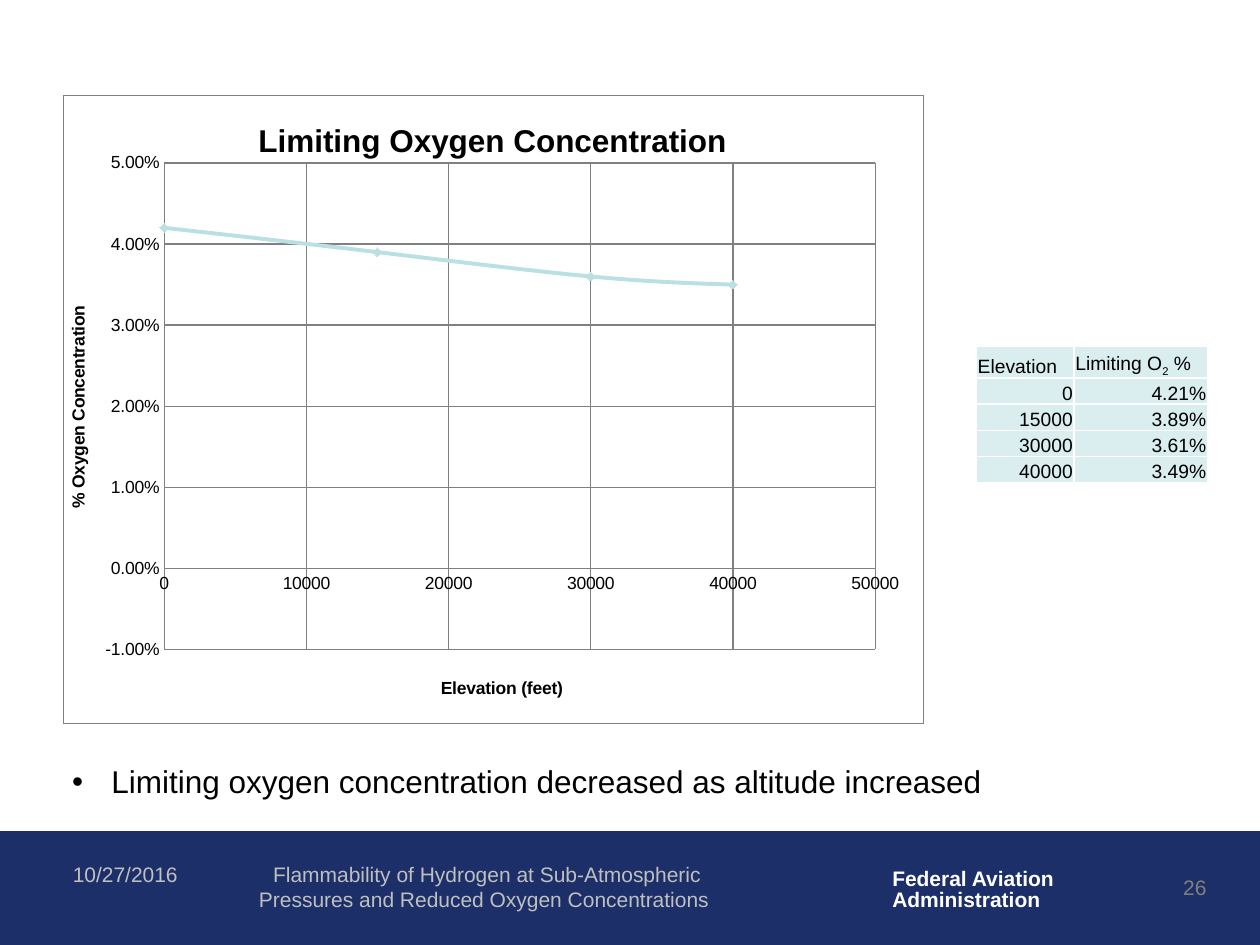
from lxml import etree
from pptx import Presentation
from pptx import util as u
from pptx.chart.data import XyChartData
from pptx.dml.color import RGBColor
from pptx.enum import chart as charts, shapes, text
from pptx.oxml import parse_xml
from pptx.oxml.ns import nsdecls, qn

COLORS = {
    "navy": "1D2F68", "white": "FFFFFF", "black": "000000", "grey": "808080",
    "footer": "BFBFBF", "date": "C0C0C0", "series": "BBE0E3", "cell": "DAEDEF",
}
FONT = "Arial"
READINGS = [(0, 0.0421), (15000, 0.0389), (30000, 0.0361), (40000, 0.0349)]
ALIGN = text.PP_ALIGN


def rgb(name):
    return RGBColor.from_string(COLORS[name])


def set_font(font, size, color="black", bold=False):
    font.name, font.size, font.bold = FONT, u.Pt(size), bold
    font.color.rgb = rgb(color)


def place_chart_part(parent, x, y, width=None, height=None):
    """Give a chart title or plot area a manual layout, in fractions of the chart."""
    for old in parent.findall(qn("c:layout")):
        parent.remove(old)
    inner = '<c:layoutTarget val="inner"/>' if width else ""
    sizes = f'<c:w val="{width}"/><c:h val="{height}"/>' if width else ""
    layout = parse_xml(
        f'<c:layout {nsdecls("c")}><c:manualLayout>{inner}<c:xMode val="edge"/>'
        f'<c:yMode val="edge"/><c:x val="{x}"/><c:y val="{y}"/>{sizes}'
        "</c:manualLayout></c:layout>")
    rich_text = parent.find(qn("c:tx"))
    if rich_text is None:
        parent.insert(0, layout)
    else:
        rich_text.addnext(layout)


class SlideBuilder:
    """Builds the slide's elements in one shared style; lengths are in points."""

    def __init__(self, presentation):
        self.slide = presentation.slides.add_slide(presentation.slide_layouts[1])
        title = self.slide.shapes.title
        title.element.getparent().remove(title.element)

    def band(self, left, top, width, height):
        shape = self.slide.shapes.add_shape(
            shapes.MSO_SHAPE.RECTANGLE, *map(u.Pt, (left, top, width, height)))
        shape.shadow.inherit = False
        shape.fill.solid()
        shape.fill.fore_color.rgb = shape.line.color.rgb = rgb("navy")
        shape.line.width = u.Pt(0.75)

    def label(self, box, content, color, align=ALIGN.LEFT, bold=False, spacing=None, wrap=True):
        frame = self.slide.shapes.add_textbox(*map(u.Pt, box)).text_frame
        frame.word_wrap = wrap
        frame.text = content
        for paragraph in frame.paragraphs:
            paragraph.alignment = align
            paragraph.line_spacing = spacing
            set_font(paragraph.font, 12, color, bold)

    def bullet(self, box, content):
        body = self.slide.placeholders[1]
        body.left, body.top, body.width, body.height = map(u.Pt, box)
        frame = body.text_frame
        frame.auto_size = text.MSO_AUTO_SIZE.NONE
        frame.text = content
        paragraph = frame.paragraphs[0]
        properties = paragraph._p.get_or_add_pPr()
        properties.set("marL", str(u.Pt(22.5)))
        properties.set("indent", str(-u.Pt(22.5)))
        etree.SubElement(properties, qn("a:buChar")).set("char", "•")
        paragraph.space_before = u.Pt(0)
        set_font(paragraph.font, 18)

    def axis(self, axis, title, position, low, high, step, number_format):
        axis.minimum_scale, axis.maximum_scale, axis.major_unit = low, high, step
        axis.major_tick_mark = axis.minor_tick_mark = charts.XL_TICK_MARK.NONE
        axis.has_major_gridlines = True
        for line in (axis.format.line, axis.major_gridlines.format.line):
            line.color.rgb, line.width = rgb("grey"), u.Pt(0.75)
        axis.tick_labels.number_format = number_format
        axis.tick_labels.number_format_is_linked = False
        set_font(axis.tick_labels.font, 10)
        self.chart_title(axis.axis_title, title, 10, position)

    def chart_title(self, title, content, size, position):
        title.text_frame.text = content
        set_font(title.text_frame.paragraphs[0].runs[0].font, size, bold=True)
        place_chart_part(title._element, *position)

    def chart(self, box):
        data = XyChartData()
        points = data.add_series("Limiting O2 %", number_format="0.00%")
        for elevation, oxygen in READINGS:
            points.add_data_point(elevation, round(oxygen, 3))
        chart = self.slide.shapes.add_chart(
            charts.XL_CHART_TYPE.XY_SCATTER_SMOOTH, *map(u.Pt, box), data).chart
        set_font(chart.font, 10)
        chart.has_legend = False
        chart.has_title = True
        self.chart_title(chart.chart_title, "Limiting Oxygen Concentration", 18, (0.22, 0.03))
        self.axis(chart.category_axis, "Elevation (feet)", (0.435, 0.92), 0, 50000, 10000, "0")
        self.axis(chart.value_axis, "% Oxygen Concentration", (0, 0.33),
                  -0.01, 0.05, 0.01, "0.00%")
        chart_element = chart._chartSpace.find(qn("c:chart"))
        place_chart_part(chart_element.find(qn("c:plotArea")), 0.117, 0.108, 0.827, 0.774)
        chart_element.addnext(parse_xml(
            f'<c:spPr {nsdecls("c", "a")}><a:noFill/><a:ln w="{u.Pt(0.75)}"><a:solidFill>'
            f'<a:srgbClr val="{COLORS["grey"]}"/></a:solidFill></a:ln></c:spPr>'))
        chart.plots[0].vary_by_categories = False
        series = chart.plots[0].series[0]
        series._element.find(qn("c:smooth")).set("val", "1")
        series.format.line.color.rgb, series.format.line.width = rgb("series"), u.Pt(2.25)
        series.marker.style, series.marker.size = charts.XL_MARKER_STYLE.DIAMOND, 5
        series.marker.format.fill.solid()
        series.marker.format.fill.fore_color.rgb = rgb("series")
        series.marker.format.line.color.rgb = rgb("series")

    def cell(self, cell, parts, align):
        """Fill a cell; every second part of its text is subscript."""
        properties = cell._tc.get_or_add_tcPr()
        for side in ("lnL", "lnR", "lnT", "lnB"):
            properties.append(parse_xml(
                f'<a:{side} {nsdecls("a")} w="{u.Pt(1)}"><a:solidFill>'
                f'<a:srgbClr val="{COLORS["white"]}"/></a:solidFill></a:{side}>'))
        cell.fill.solid()
        cell.fill.fore_color.rgb = rgb("cell")
        cell.margin_left = cell.margin_right = cell.margin_top = u.Pt(0.72)
        cell.margin_bottom = 0
        cell.vertical_anchor = text.MSO_ANCHOR.BOTTOM
        paragraph = cell.text_frame.paragraphs[0]
        paragraph.alignment = align
        for index, part in enumerate(parts):
            run = paragraph.add_run()
            run.text = part
            set_font(run.font, 11)
            if index % 2:
                run.font._element.set("baseline", "-25000")

    def table(self, left, top, widths, heights):
        rows = [(["Elevation"], ["Limiting O", "2", " %"])]
        rows += [([str(elevation)], [f"{oxygen:.2%}"]) for elevation, oxygen in READINGS]
        table = self.slide.shapes.add_table(
            len(rows), len(widths), *map(u.Pt, (left, top, sum(widths), sum(heights)))).table
        for column, width in zip(table.columns, widths):
            column.width = u.Pt(width)
        for row_index, (row, height) in enumerate(zip(rows, heights)):
            table.rows[row_index].height = u.Pt(height)
            for column_index, parts in enumerate(row):
                self.cell(table.cell(row_index, column_index), parts,
                          ALIGN.RIGHT if row_index else ALIGN.LEFT)


def main():
    presentation = Presentation()
    presentation.slide_width, presentation.slide_height = u.Pt(720), u.Pt(540)
    builder = SlideBuilder(presentation)
    builder.band(0, 475.2, 720, 64.4)
    builder.label((546.5, 496.5, 150, 36), "26", "grey", ALIGN.RIGHT)
    builder.label((131.5, 488.6, 293.8, 36),
                  "Flammability of Hydrogen at Sub-Atmospheric Pressures "
                  "and Reduced Oxygen Concentrations ", "footer", ALIGN.CENTER)
    builder.label((34.5, 489, 85, 21.6), "10/27/2016", "date")
    builder.label((502.8, 493.2, 108, 31.7), "Federal Aviation\nAdministration", "white",
                  bold=True, spacing=0.85, wrap=False)
    builder.chart((36, 54, 492, 360))
    builder.table(558, 198, (55.8, 76.2), (18, 15, 15, 15, 15))
    builder.bullet((34, 432, 618, 29), "Limiting oxygen concentration decreased as altitude increased")
    presentation.save("out.pptx")


if __name__ == "__main__":
    main()
